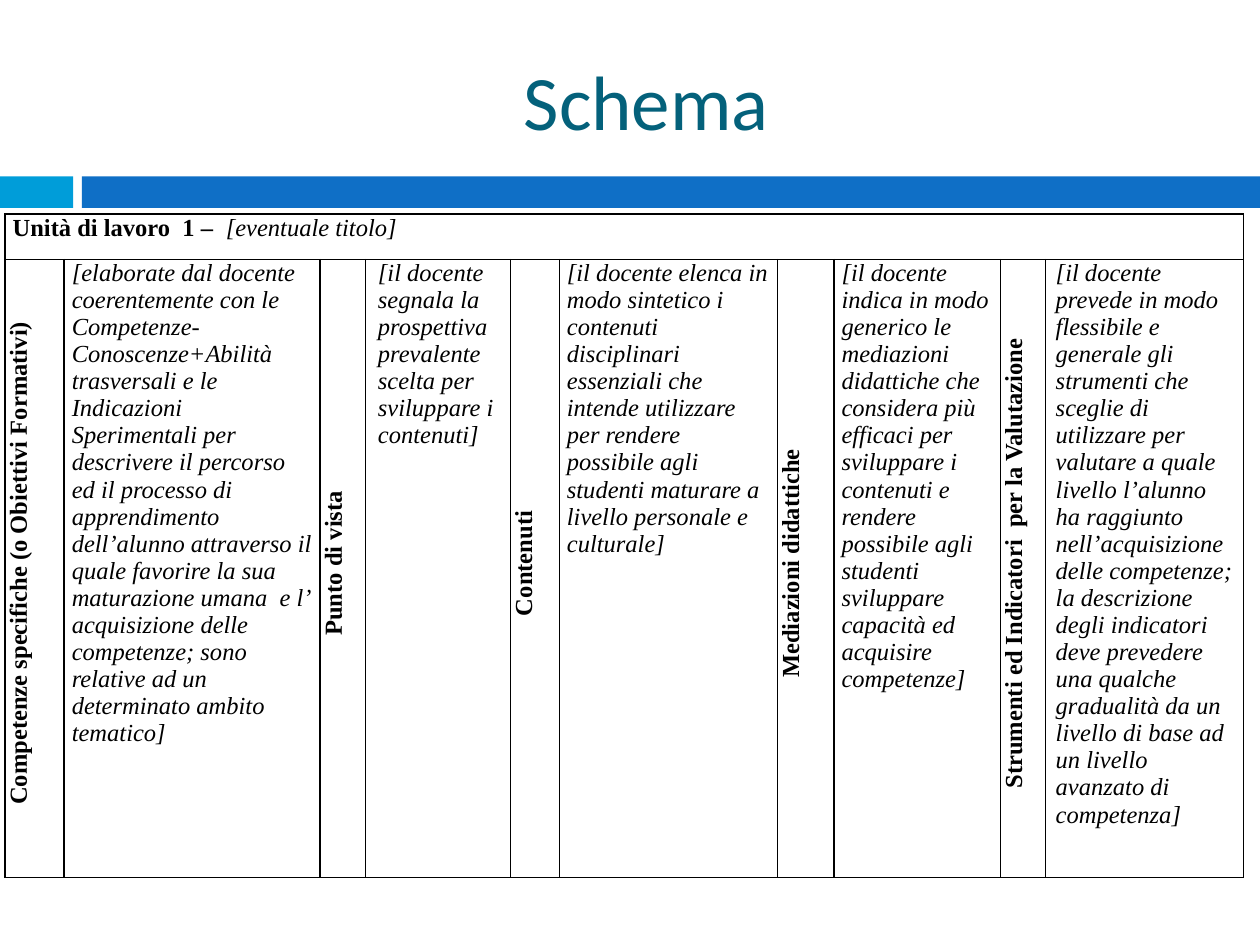
from dataclasses import dataclass

from lxml.etree import SubElement
from pptx import Presentation
from pptx.dml.color import RGBColor
from pptx.enum.shapes import MSO_SHAPE as Shape
from pptx.enum.text import MSO_ANCHOR as Anchor, PP_ALIGN as Align
from pptx.oxml.ns import qn
from pptx.util import Inches, Pt


@dataclass
class Bar:
    left: float
    width: float
    color: str


@dataclass
class Section:
    heading: str
    heading_width: float
    body: str
    body_width: float
    body_indent: float = 0


BARS = [Bar(0, 0.58, "009DD9"), Bar(0.65, 9.35, "0F6FC6")]

SECTIONS = [
    Section(
        "Competenze specifiche (o Obiettivi Formativi)", 0.47,
        "[elaborate dal docente coerentemente con le Competenze-Conoscenze+Abilità "
        "trasversali e le Indicazioni Sperimentali per descrivere il percorso ed il "
        "processo di apprendimento dell’alunno attraverso il quale favorire la sua "
        "maturazione umana  e l’ acquisizione delle competenze; sono relative ad un "
        "determinato ambito tematico]", 2.03),
    Section(
        "Punto di vista", 0.36,
        "[il docente segnala la prospettiva prevalente scelta per sviluppare i "
        "contenuti]", 1.15, 0.04),
    Section(
        "Contenuti", 0.39,
        "[il docente elenca in modo sintetico i contenuti disciplinari essenziali che "
        "intende utilizzare per rendere possibile agli studenti maturare a livello "
        "personale e culturale]", 1.73),
    Section(
        "Mediazioni didattiche", 0.45,
        "[il docente indica in modo generico le mediazioni didattiche che considera "
        "più efficaci per sviluppare i contenuti e rendere possibile agli studenti "
        "sviluppare capacità ed acquisire competenze]", 1.32),
    Section(
        "Strumenti ed Indicatori  per la Valutazione", 0.36,
        "[il docente prevede in modo flessibile e generale gli strumenti che sceglie "
        "di utilizzare per valutare a quale livello l’alunno ha raggiunto "
        "nell’acquisizione delle competenze; la descrizione degli indicatori deve "
        "prevedere una qualche gradualità da un livello di base ad un livello avanzato "
        "di competenza]", 1.57, 0.02),
]


def rgb(color: str) -> RGBColor:
    return RGBColor.from_string(color)


def style_span(span, name: str, size: float, color: str,
               bold: bool = False, italic: bool = False) -> None:
    span.font.name = name
    span.font.size = Pt(size)
    span.font.color.rgb = rgb(color)
    span.font.bold = bold
    span.font.italic = italic


def draw_bar(page, bar: Bar) -> None:
    box = page.shapes.add_shape(Shape.RECTANGLE, Inches(bar.left), Inches(1.4),
                                Inches(bar.width), Inches(0.25))
    box.shadow.inherit = False
    box.fill.solid()
    box.fill.fore_color.rgb = rgb(bar.color)
    box.line.fill.background()


def draw_title(page, text: str) -> None:
    box = page.shapes.add_textbox(Inches(0.67), Inches(0.25), Inches(8.92), Inches(1.08))
    frame = box.text_frame
    frame.word_wrap = True
    frame.vertical_anchor = Anchor.MIDDLE
    frame.text = text
    para = frame.paragraphs[0]
    para.alignment = Align.CENTER
    style_span(para.runs[0], "Calibri", 44, "04617B")


def format_cell(cell) -> None:
    cell.margin_left = cell.margin_right = Inches(0.06)
    cell.margin_top = cell.margin_bottom = 0
    properties = cell._tc.get_or_add_tcPr()
    for side in ("a:lnL", "a:lnR", "a:lnT", "a:lnB"):
        line = SubElement(properties, qn(side), w=str(Pt(1)))
        fill = SubElement(line, qn("a:solidFill"))
        SubElement(fill, qn("a:srgbClr"), val="000000")
    cell.fill.background()


def add_span(para, text: str, bold: bool = False, italic: bool = False) -> None:
    span = para.add_run()
    span.text = text
    style_span(span, "Times New Roman", 14, "000000", bold, italic)


def indent(para, amount: float) -> None:
    para._p.get_or_add_pPr().set("marL", str(Inches(amount)))


def fill_section(heading_cell, body_cell, section: Section) -> None:
    heading_cell._tc.get_or_add_tcPr().set("vert", "vert270")
    heading = heading_cell.text_frame.paragraphs[0]
    heading.alignment = Align.CENTER
    indent(heading, 0.08)
    add_span(heading, section.heading, bold=True)
    body = body_cell.text_frame.paragraphs[0]
    indent(body, section.body_indent)
    add_span(body, section.body, italic=True)


def draw_table(page) -> None:
    widths = [width for section in SECTIONS
              for width in (section.heading_width, section.body_width)]
    heights = [0.36, 4.84]
    frame = page.shapes.add_table(len(heights), len(widths), Inches(0.04), Inches(1.7),
                                  Inches(sum(widths)), Inches(sum(heights)))
    table = frame.table
    table.first_row = table.horz_banding = False
    for column, width in zip(table.columns, widths):
        column.width = Inches(width)
    for row, height in zip(table.rows, heights):
        row.height = Inches(height)
    for cell in table.iter_cells():
        format_cell(cell)

    header = table.cell(0, 0)
    header.merge(table.cell(0, len(widths) - 1))
    para = header.text_frame.paragraphs[0]
    add_span(para, "Unità di lavoro  1 –  ", bold=True)
    add_span(para, "[eventuale titolo]", italic=True)
    for index, section in enumerate(SECTIONS):
        fill_section(table.cell(1, 2 * index), table.cell(1, 2 * index + 1), section)


def main() -> None:
    deck = Presentation()
    deck.slide_width, deck.slide_height = Inches(10), Inches(7.5)
    page = deck.slides.add_slide(deck.slide_layouts[6])
    for bar in BARS:
        draw_bar(page, bar)
    draw_title(page, "Schema")
    draw_table(page)
    deck.save("out.pptx")


if __name__ == "__main__":
    main()
